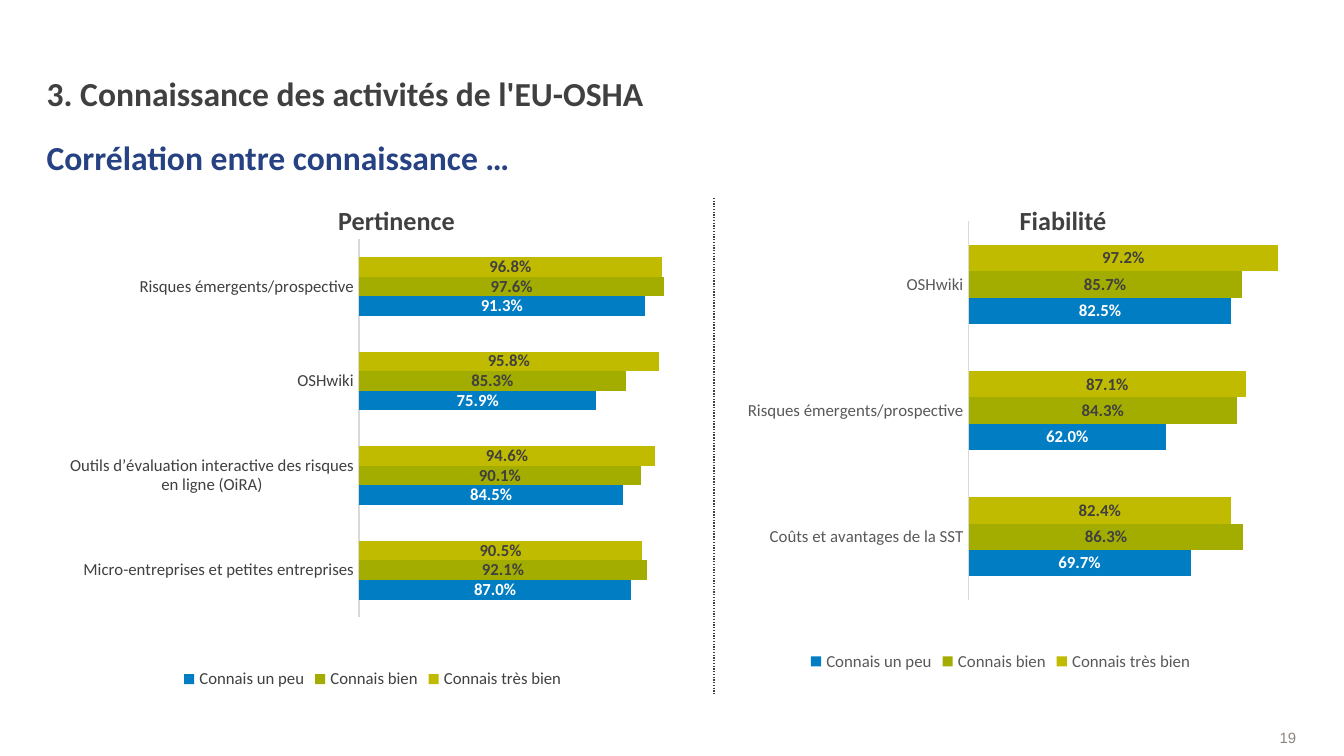
from lxml import etree
from pptx import Presentation
from pptx.chart.data import CategoryChartData
from pptx.dml.color import RGBColor
from pptx.enum.chart import XL_CHART_TYPE, XL_LABEL_POSITION, XL_LEGEND_POSITION, XL_TICK_MARK
from pptx.enum.dml import MSO_LINE
from pptx.enum.shapes import MSO_CONNECTOR, MSO_SHAPE
from pptx.enum.text import MSO_ANCHOR, PP_ALIGN
from pptx.oxml import parse_xml
from pptx.oxml.ns import nsdecls, qn
from pptx.util import Pt

BARS = XL_CHART_TYPE.BAR_CLUSTERED
CENTER = XL_LABEL_POSITION.CENTER
BOTTOM = XL_LEGEND_POSITION.BOTTOM
NO_TICK = XL_TICK_MARK.NONE
DOTS = MSO_LINE.ROUND_DOT
STRAIGHT = MSO_CONNECTOR.STRAIGHT
RECT = MSO_SHAPE.RECTANGLE
TOP, MID, LOW = MSO_ANCHOR.TOP, MSO_ANCHOR.MIDDLE, MSO_ANCHOR.BOTTOM
LEFT, MIDDLE, RIGHT = PP_ALIGN.LEFT, PP_ALIGN.CENTER, PP_ALIGN.RIGHT

# Content
TITLE = "3. Connaissance des activités de l'EU-OSHA"
TOPIC = "Corrélation entre connaissance …"
PAGE = "19"
# Series: name, bar colour, label colour
LEVELS = [
    ("Connais très bien", "lime", "dark"),
    ("Connais bien", "olive", "dark"),
    ("Connais un peu", "blue", "white"),
]
# Rows: category, then one value per level
CHARTS = [
    {
        "head": "Pertinence", "head_x": 167, "box": (37.5, 118, 322.5, 254),
        "plot": (0.477, 0.04, 0.523, 0.798), "ink": "dark",
        "rows": [
            ("Risques émergents/prospective", 0.968, 0.976, 0.913),
            ("OSHwiki", 0.958, 0.853, 0.759),
            ("Outils d’évaluation interactive des risques en ligne (OiRA)",
             0.946, 0.901, 0.845),
            ("Micro-entreprises et petites entreprises", 0.905, 0.921, 0.87),
        ],
    },
    {
        "head": "Fiabilité", "head_x": 524, "box": (371.5, 108.5, 329, 254),
        "plot": (0.448, 0.04, 0.519, 0.798), "ink": "gray",
        "rows": [
            ("OSHwiki", 0.972, 0.857, 0.825),
            ("Risques émergents/prospective", 0.871, 0.843, 0.62),
            ("Coûts et avantages de la SST", 0.824, 0.863, 0.697),
        ],
    },
]

# Theme
THEME = {
    "font": "Calibri", "page_font": "Arial", "percent": "0.0%",
    "title": 18, "head": 14, "label": 9, "page": 8,
    "dark": "404040", "gray": "595959", "navy": "264283", "white": "FFFFFF",
    "lime": "C1BB00", "olive": "A2AD00", "blue": "007DC3",
    "axis": "D9D9D9", "taupe": "8E8581",
}


def tint(name):
    return RGBColor.from_string(THEME[name])


def style(font, size, color, bold=False, face="font"):
    font.name = THEME[face]
    font.size = Pt(THEME[size])
    font.bold = bold
    font.color.rgb = tint(color)


def place(shape, box):
    shape.left, shape.top, shape.width, shape.height = map(Pt, box)


def write(shape, text, size, color, anchor, align=LEFT, bold=True, face="font", inset=0):
    frame = shape.text_frame
    frame.word_wrap = True
    frame.vertical_anchor = anchor
    frame.margin_left = frame.margin_right = frame.margin_bottom = 0
    frame.margin_top = Pt(inset)
    para = frame.paragraphs[0]
    para.alignment = align
    run = para.add_run()
    run.text = text
    style(run.font, size, color, bold, face)


def panel(slide, box):
    shape = slide.shapes.add_shape(RECT, *map(Pt, box))
    shape.shadow.inherit = False
    shape.fill.solid()
    shape.fill.fore_color.rgb = tint("white")
    shape.line.fill.background()
    return shape


def set_plot(chart, plot):
    """Fix the inner plot area and clear the chart background."""
    area = chart._chartSpace.chart.plotArea
    for old in area.findall(qn("c:layout")):
        area.remove(old)
    layout = etree.Element(qn("c:layout"))
    manual = etree.SubElement(layout, qn("c:manualLayout"))
    parts = [("layoutTarget", "inner"), ("xMode", "edge"), ("yMode", "edge")]
    parts += zip("xywh", plot)
    for tag, val in parts:
        etree.SubElement(manual, qn("c:" + tag)).set("val", str(val))
    area.insert(0, layout)
    clear = parse_xml(
        f'<c:spPr {nsdecls("c", "a")}><a:noFill/><a:ln><a:noFill/></a:ln></c:spPr>')
    chart._chartSpace.chart.addnext(clear)


def add_bars(slide, item):
    names, *columns = zip(*item["rows"])
    data = CategoryChartData(number_format=THEME["percent"])
    data.categories = names
    for (name, _, _), values in zip(LEVELS, columns):
        data.add_series(name, values)
    chart = slide.shapes.add_chart(BARS, *map(Pt, item["box"]), data).chart
    chart.has_title = False
    style(chart.font, "label", item["ink"])
    set_plot(chart, item["plot"])

    # Axes
    cats, vals = chart.category_axis, chart.value_axis
    cats.reverse_order = True
    cats.major_tick_mark = cats.minor_tick_mark = NO_TICK
    cats.has_major_gridlines = vals.has_major_gridlines = False
    cats.format.line.color.rgb = tint("axis")
    cats.format.line.width = Pt(0.75)
    style(cats.tick_labels.font, "label", item["ink"])
    vals.minimum_scale, vals.maximum_scale = 0, 1
    vals.visible = False

    # Legend
    chart.has_legend = True
    chart.legend.position = BOTTOM
    chart.legend.include_in_layout = False
    style(chart.legend.font, "label", item["ink"])

    # Bars and labels
    bars = chart.plots[0]
    bars.gap_width, bars.overlap = 182, 0
    bars.vary_by_categories = False
    for series, (_, color, ink) in zip(bars.series, LEVELS):
        series.format.fill.solid()
        series.format.fill.fore_color.rgb = tint(color)
        series.invert_if_negative = False
        labels = series.data_labels
        labels.show_value = True
        labels.position = CENTER
        labels.number_format = THEME["percent"]
        labels.number_format_is_linked = False
        style(labels.font, "label", ink, True)


def main():
    deck = Presentation()
    deck.slide_width, deck.slide_height = Pt(720), Pt(405)
    slide = deck.slides.add_slide(deck.slide_layouts[5])

    # Page number
    page = panel(slide, (592.5, 389.5, 102, 11.5))
    write(page, PAGE, "page", "taupe", MID, RIGHT, False, "page_font")

    # Title and topic
    title = slide.shapes.title
    place(title, (25, 15, 505, 45.5))
    write(title, TITLE, "title", "dark", LOW)
    topic = slide.shapes.add_textbox(*map(Pt, (25, 72, 669, 23)))
    write(topic, TOPIC, "title", "navy", TOP, inset=1.5)

    # Chart headings
    for item in CHARTS:
        head = panel(slide, (item["head_x"], 101, 91, 34))
        write(head, item["head"], "head", "dark", MID, MIDDLE)

    # Divider
    rule = slide.shapes.add_connector(STRAIGHT, *map(Pt, (382.5, 106, 382.5, 372)))
    rule.line.color.rgb = tint("dark")
    rule.line.width = Pt(0.75)
    rule.line.dash_style = DOTS
    etree.SubElement(rule._element.spPr, qn("a:effectLst"))

    # Charts
    for item in CHARTS:
        add_bars(slide, item)

    deck.save("out.pptx")


if __name__ == "__main__":
    main()
